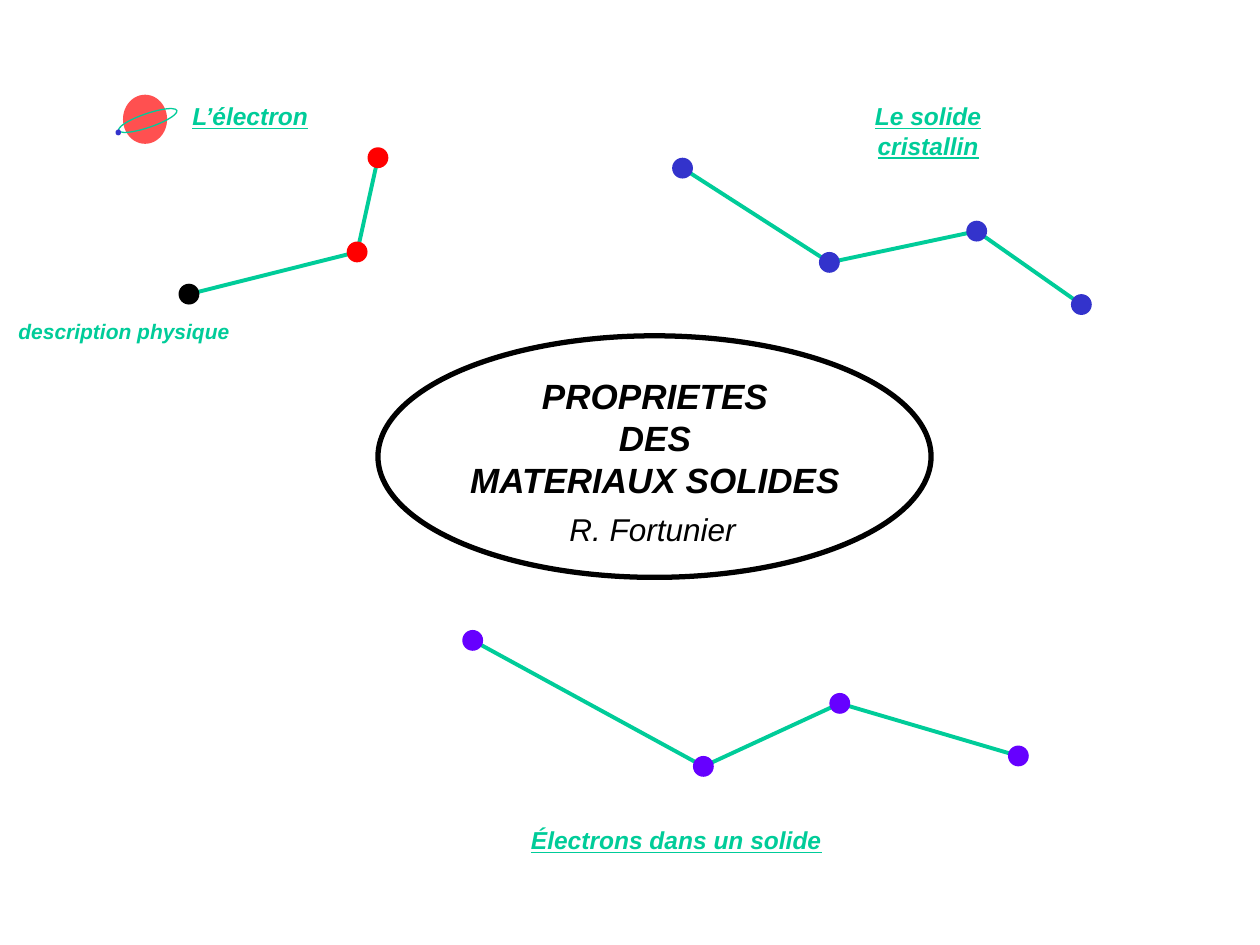
from dataclasses import dataclass
from itertools import pairwise
from typing import Optional

from lxml import etree
from pptx import Presentation
from pptx.dml.color import RGBColor
from pptx.enum.shapes import MSO_CONNECTOR, MSO_SHAPE
from pptx.enum.text import MSO_ANCHOR, MSO_AUTO_SIZE, PP_ALIGN
from pptx.oxml.ns import qn
from pptx.util import Cm, Pt

STRAIGHT = MSO_CONNECTOR.STRAIGHT
OVAL = MSO_SHAPE.OVAL
MIDDLE, TOP = MSO_ANCHOR.MIDDLE, MSO_ANCHOR.TOP
LEFT, CENTER, RIGHT = PP_ALIGN.LEFT, PP_ALIGN.CENTER, PP_ALIGN.RIGHT
NO_AUTOFIT = MSO_AUTO_SIZE.NONE

GREEN, BLACK, RED = "00CC99", "000000", "FF0000"
BLUE, VIOLET, CORAL = "3333CC", "6600FF", "FF5050"
DOT_SIZE = 0.42

HEADING = {"size": Pt(14), "bold": True, "italic": True, "underline": True}
CAPTION = {"size": Pt(12), "bold": True, "italic": True}
COURSE = {"size": Pt(20), "bold": True, "italic": True}
AUTHOR = {"size": Pt(18), "bold": False, "italic": True}


@dataclass
class Area:
    left: float
    top: float
    width: float
    height: float

    def lengths(self) -> tuple:
        return Cm(self.left), Cm(self.top), Cm(self.width), Cm(self.height)


@dataclass
class Label:
    text: str
    area: Area
    style: dict
    color: str = GREEN
    align: PP_ALIGN = CENTER
    wrap: bool = True
    margin: float = 0.25


@dataclass
class Ellipse:
    area: Area
    fill: Optional[str] = None
    line: Optional[str] = None
    weight: float = 0
    rotation: float = 0


@dataclass
class Chain:
    points: list
    colors: list


CHAINS = [
    Chain([(3.81, 5.93), (7.2, 5.08), (7.62, 3.18)], [BLACK, RED, RED]),
    Chain([(13.76, 3.39), (16.72, 5.29), (19.69, 4.66), (21.8, 6.14)], [BLUE] * 4),
    Chain([(9.53, 12.91), (14.18, 15.45), (16.93, 14.18), (20.53, 15.24)], [VIOLET] * 4),
]

ELLIPSES = [
    Ellipse(Area(2.48, 1.91, 0.89, 0.99), fill=CORAL),
    Ellipse(Area(2.36, 2.29, 1.24, 0.28), line=GREEN, weight=0.75, rotation=341.1),
    Ellipse(Area(2.33, 2.61, 0.11, 0.12), fill=BLUE),
    Ellipse(Area(7.62, 6.77, 11.15, 4.87), line=BLACK, weight=3),
]

CAPTION_LABEL = Label("description physique", Area(0, 6.35, 4.88, 0.64), CAPTION, align=RIGHT)

LABELS = [
    Label("L’électron", Area(3.61, 1.91, 2.87, 0.84), HEADING, wrap=False),
    Label("Le solide cristallin", Area(16.31, 1.91, 4.8, 0.84), HEADING, margin=0.3),
    Label("Électrons dans un solide", Area(10.36, 16.51, 6.55, 0.84), HEADING),
    Label("R. Fortunier", Area(11.23, 10.16, 3.86, 1.02), AUTHOR, BLACK, LEFT, False),
    Label("PROPRIETES\vDES\vMATERIAUX SOLIDES", Area(7.59, 7.42, 11.23, 2.74), COURSE, BLACK),
]


def rgb(value: str) -> RGBColor:
    return RGBColor.from_string(value)


def write_label(box, label: Label, anchor: MSO_ANCHOR = TOP) -> None:
    frame = box.text_frame
    frame_format = {
        "auto_size": NO_AUTOFIT,
        "word_wrap": label.wrap,
        "vertical_anchor": anchor,
        "margin_left": Cm(label.margin),
        "margin_right": Cm(label.margin),
        "margin_top": Cm(0.13),
        "margin_bottom": Cm(0.13),
    }
    for name, value in frame_format.items():
        setattr(frame, name, value)
    frame.text = label.text
    paragraph = frame.paragraphs[0]
    paragraph.alignment = label.align
    for span in paragraph.runs:
        for name, value in {"name": "Arial", **label.style}.items():
            setattr(span.font, name, value)
        span.font.color.rgb = rgb(label.color)


def draw_title(page, label: Label) -> None:
    box = page.shapes.title
    box.left, box.top, box.width, box.height = label.area.lengths()
    write_label(box, label, MIDDLE)


def draw_label(page, label: Label) -> None:
    write_label(page.shapes.add_textbox(*label.area.lengths()), label)


def draw_ellipse(page, ellipse: Ellipse) -> None:
    shape = page.shapes.add_shape(OVAL, *ellipse.area.lengths())
    shape.shadow.inherit = False
    shape.rotation = ellipse.rotation
    if ellipse.fill:
        shape.fill.solid()
        shape.fill.fore_color.rgb = rgb(ellipse.fill)
    else:
        shape.fill.background()
    if ellipse.line:
        shape.line.color.rgb = rgb(ellipse.line)
        shape.line.width = Pt(ellipse.weight)
    else:
        shape.line.fill.background()


def draw_chain(page, chain: Chain) -> None:
    for start, end in pairwise(chain.points):
        ends = [Cm(value) for value in (*start, *end)]
        connector = page.shapes.add_connector(STRAIGHT, *ends)
        connector.line.color.rgb = rgb(GREEN)
        connector.line.width = Pt(2.25)
        etree.SubElement(connector._element.spPr, qn("a:effectLst"))
    for (x, y), color in zip(chain.points, chain.colors):
        area = Area(x - DOT_SIZE / 2, y - DOT_SIZE / 2, DOT_SIZE, DOT_SIZE)
        draw_ellipse(page, Ellipse(area, fill=color))


def main() -> None:
    deck = Presentation()
    deck.slide_width, deck.slide_height = Cm(25.4), Cm(19.05)
    page = deck.slides.add_slide(deck.slide_layouts[5])
    draw_title(page, CAPTION_LABEL)
    for chain in CHAINS:
        draw_chain(page, chain)
    for ellipse in ELLIPSES:
        draw_ellipse(page, ellipse)
    for label in LABELS:
        draw_label(page, label)
    deck.save("out.pptx")


if __name__ == "__main__":
    main()
